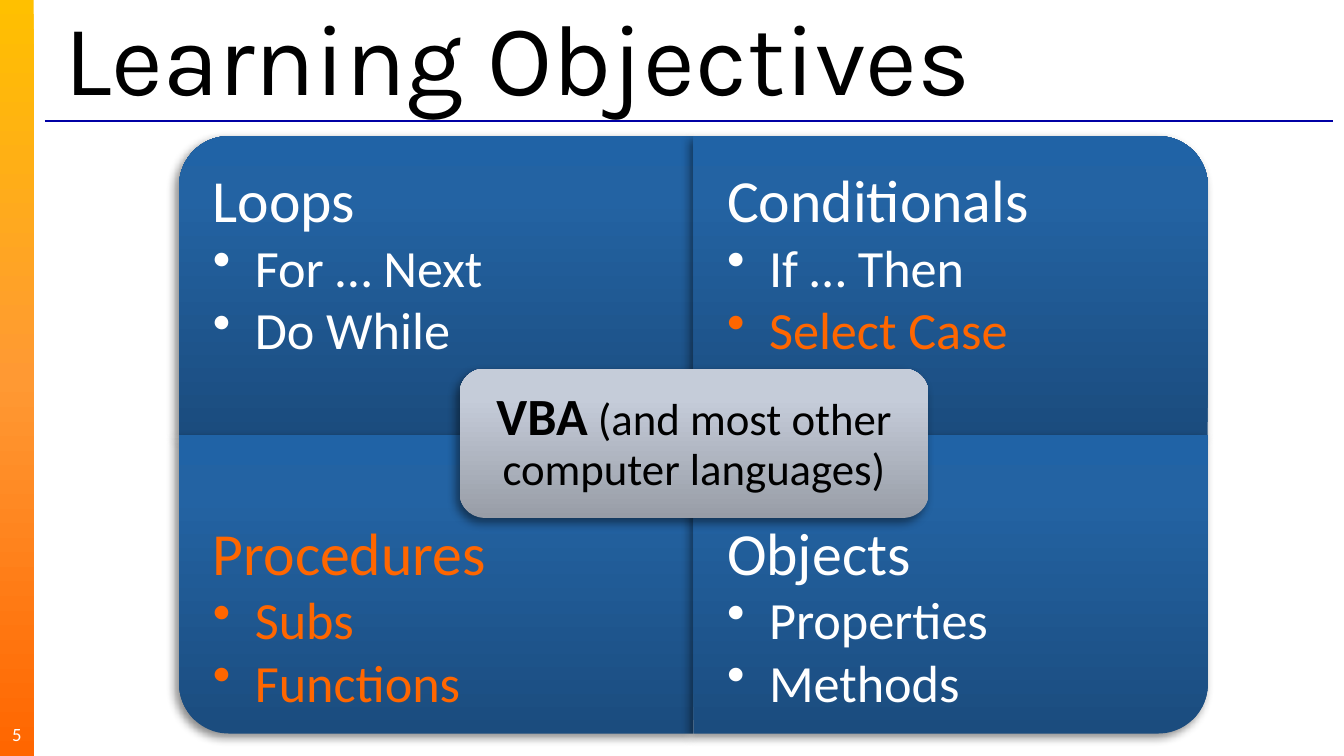
from dataclasses import dataclass
from math import cos, pi, sin

from lxml.etree import SubElement
from pptx import Presentation
from pptx.dml.color import RGBColor as Rgb
from pptx.enum.shapes import MSO_CONNECTOR as Link, MSO_SHAPE as Form
from pptx.enum.text import MSO_ANCHOR as Anchor, PP_ALIGN as Align
from pptx.oxml.ns import qn
from pptx.util import Pt


@dataclass(frozen=True)
class Theme:
    body: str = "Calibri"
    title: str = "Karla"
    black: str = "000000"
    white: str = "FFFFFF"
    accent: str = "FF6600"
    rule: str = "0000A5"
    bar: tuple = ((0, "FFC000"), (50, "FF9933"), (100, "FF6600"))
    blue: tuple = ((0, "1B4C7E"), (80, "2363A3"), (100, "2063A6"))
    gray: tuple = ((0, "989DA7"), (80, "C5CCD9"), (100, "C6CCDB"))
    huge: int = 54
    head: int = 32
    item: int = 28
    note: int = 24
    tiny: int = 10


theme = Theme()


def paint(shape, stops, angle=90, shade=True):
    """Fill with a gradient, drop the outline and cast a soft shadow if asked."""
    shape.fill.gradient()
    shape.fill.gradient_angle = angle
    ramp = shape._element.spPr.find(".//" + qn("a:gsLst"))
    ramp.clear()
    for pos, color in stops:
        stop = SubElement(ramp, qn("a:gs"), pos=str(pos * 1000))
        SubElement(stop, qn("a:srgbClr"), val=color)
    shape.line.fill.background()
    shape.shadow.inherit = False
    if shade:
        effect = shape._element.spPr.find(qn("a:effectLst"))
        cast = SubElement(effect, qn("a:outerShdw"), blurRad=str(Pt(5)), dist=str(Pt(3)),
                          dir=str(135 * 60000), algn="ctr", rotWithShape="0")
        color = SubElement(cast, qn("a:srgbClr"), val=theme.black)
        SubElement(color, qn("a:alpha"), val="45000")


def style(font, size, color, name=theme.body):
    font.name, font.size = name, Pt(size)
    font.color.rgb = Rgb.from_string(color)


deck = Presentation()
deck.slide_width, deck.slide_height = Pt(720), Pt(405)
slide = deck.slides.add_slide(deck.slide_layouts[6])
shapes = slide.shapes

# Side bar, rule, title and page number
bar = shapes.add_shape(Form.RECTANGLE, 0, 0, Pt(18), Pt(405))
paint(bar, theme.bar, 270, False)

rule = shapes.add_connector(Link.STRAIGHT, Pt(24), Pt(64.8), Pt(714), Pt(64.8))
rule.line.width = Pt(0.75)
rule.line.color.rgb = Rgb.from_string(theme.rule)
SubElement(rule._element.spPr, qn("a:effectLst"))

title = shapes.add_textbox(Pt(27.4), Pt(10.8), Pt(690), Pt(38)).text_frame
title.word_wrap = True
title.vertical_anchor = Anchor.MIDDLE
title.text = "Learning Objectives"
style(title.paragraphs[0].font, theme.huge, theme.black, theme.title)

page = shapes.add_textbox(0, Pt(382.5), Pt(18), Pt(21.6)).text_frame
page.word_wrap = True
page.vertical_anchor = Anchor.MIDDLE
page.margin_left = page.margin_right = page.margin_top = page.margin_bottom = 0
page.text = "5"
page.paragraphs[0].alignment = Align.CENTER
style(page.paragraphs[0].font, theme.tiny, theme.white)

# Four quadrants around a shared centre, each with its outer corner rounded
mid_x, mid_y = 371.5, 233
wide, high, radius = 275.5, 160, 26.5
steps = 24
on, off = theme.accent, theme.white
quads = [
    (-1, -1, [("Loops", off), ("For … Next", off), ("Do While", off)]),
    (1, -1, [("Conditionals", off), ("If … Then", off), ("Select Case", on)]),
    (-1, 1, [("Procedures", on), ("Subs", on), ("Functions", on)]),
    (1, 1, [("Objects", off), ("Properties", off), ("Methods", off)]),
]
for dx, dy, lines in quads:
    out_x, out_y = mid_x + dx * wide, mid_y + dy * high
    points = [(out_x, mid_y)]
    for step in range(steps + 1):
        turn = step / steps * pi / 2
        points.append((out_x - dx * radius * (1 - cos(turn)),
                       out_y - dy * radius * (1 - sin(turn))))
    points.append((mid_x, out_y))
    pen = shapes.build_freeform(Pt(mid_x), Pt(mid_y))
    pen.add_line_segments([(Pt(x), Pt(y)) for x, y in points], close=True)
    quad = pen.convert_to_shape()
    paint(quad, theme.blue)

    frame = quad.text_frame
    frame.word_wrap = True
    frame.vertical_anchor = Anchor.TOP
    frame.margin_left = frame.margin_right = Pt(18)
    frame.margin_top, frame.margin_bottom = (Pt(14.4), Pt(57.6)) if dy < 0 else (Pt(43.2), Pt(18))
    for row, (text, color) in enumerate(lines):
        para = frame.add_paragraph() if row else frame.paragraphs[0]
        para.text = text
        para.alignment = Align.LEFT
        if row:
            para.level = 1
            props = para._p.get_or_add_pPr()
            props.set("marL", str(Pt(22.5)))
            props.set("indent", str(Pt(-22.5)))
            SubElement(props, qn("a:buChar"), char="•")
        style(para.font, theme.item if row else theme.head, color)

# Centre label
label = shapes.add_shape(Form.ROUNDED_RECTANGLE, Pt(246.2), Pt(197.5), Pt(251.3), Pt(80))
label.adjustments[0] = 0.17
paint(label, theme.gray)
frame = label.text_frame
frame.word_wrap = True
frame.vertical_anchor = Anchor.MIDDLE
frame.margin_left = frame.margin_right = frame.margin_top = frame.margin_bottom = Pt(8.5)
para = frame.paragraphs[0]
para.alignment = Align.CENTER
para.line_spacing = 0.9
for text, size, bold in [("VBA", theme.item, True),
                         (" (and most other computer languages)", theme.note, False)]:
    run = para.add_run()
    run.text = text
    style(run.font, size, theme.black)
    run.font.bold = bold

deck.save("out.pptx")
